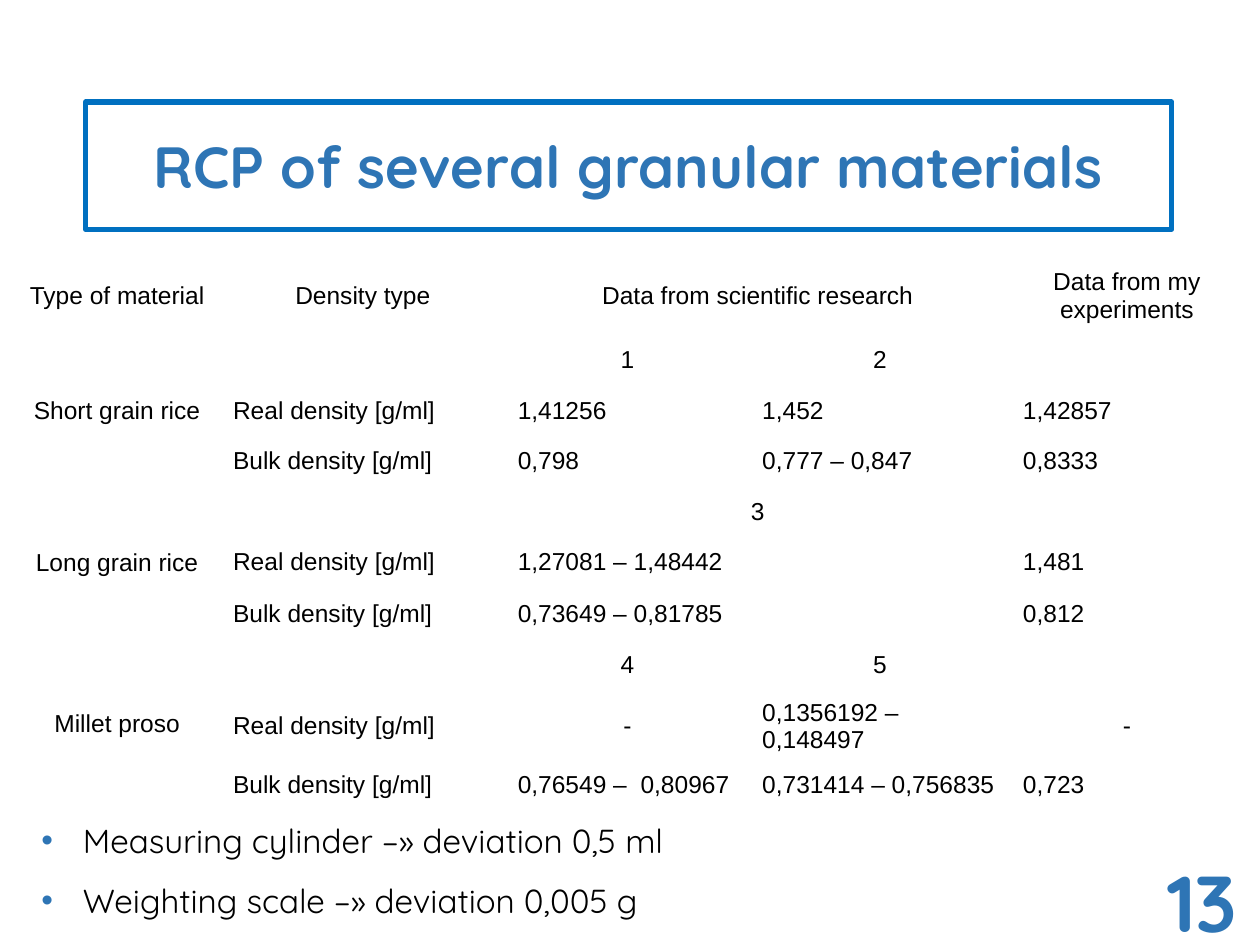
from lxml import etree
from pptx import Presentation
from pptx.dml.color import RGBColor
from pptx.enum.shapes import MSO_SHAPE
from pptx.enum.text import MSO_ANCHOR, PP_ALIGN
from pptx.oxml.ns import qn
from pptx.util import Inches, Pt

RECT = MSO_SHAPE.RECTANGLE
TOP, MIDDLE = MSO_ANCHOR.TOP, MSO_ANCHOR.MIDDLE
LEFT, CENTER, RIGHT = PP_ALIGN.LEFT, PP_ALIGN.CENTER, PP_ALIGN.RIGHT

BLUE, FRAME, BLACK = "2E75B5", "0070C0", "000000"
REAL, BULK = "Real density [g/ml]", "Bulk density [g/ml]"

COLS = [1.64, 2.26, 1.94, 2.07, 1.85]
ROWS = [0.62, 0.37, 0.4, 0.4, 0.26, 0.4, 0.42, 0.27, 0.39, 0.36]
# None marks a cell that is merged into the one to its left.
HEADS = ["Type of material", "Density type", "Data from scientific research",
         None, "Data from my experiments"]
# Each group: material, source numbers, real densities, bulk densities.
GROUPS = [
    ("Short grain rice", ["1", "2", ""],
     ["1,41256", "1,452", "1,42857"],
     ["0,798", "0,777 – 0,847", "0,8333"]),
    ("Long grain rice", ["3", None, ""],
     ["1,27081 – 1,48442", None, "1,481"],
     ["0,73649 – 0,81785", None, "0,812"]),
    ("Millet proso", ["4", "5", ""],
     ["-", "0,1356192 –  0,148497", "-"],
     ["0,76549 –  0,80967", "0,731414 – 0,756835", "0,723"]),
]
NOTES = ["Measuring cylinder –» deviation 0,5 ml",
         "Weighting scale –» deviation 0,005 g"]


def color(code):
    return RGBColor.from_string(code)


def write(para, text, size=14, font="Arial", ink=BLACK, bold=False, align=LEFT):
    para.alignment = align
    run = para.add_run()
    run.text = text
    run.font.size = Pt(size)
    run.font.name = font
    run.font.bold = bold
    run.font.color.rgb = color(ink)


def set_frame(frame, side, edge, anchor=TOP):
    frame.word_wrap = True
    frame.vertical_anchor = anchor
    frame.margin_left = frame.margin_right = Inches(side)
    frame.margin_top = frame.margin_bottom = Inches(edge)


def add_bullet(para):
    props = para._p.get_or_add_pPr()
    props.set("marL", str(Inches(0.38)))
    props.set("indent", str(Inches(-0.33)))
    tint = etree.SubElement(props, qn("a:buClr"))
    etree.SubElement(tint, qn("a:srgbClr"), val=BLUE)
    etree.SubElement(props, qn("a:buFont"), typeface="Arial")
    etree.SubElement(props, qn("a:buChar"), char="•")


def add_title(slide, box):
    shape = slide.shapes.add_shape(RECT, *map(Inches, box))
    shape.shadow.inherit = False
    shape.fill.background()
    shape.line.color.rgb = color(FRAME)
    shape.line.width = Pt(3)
    etree.SubElement(shape.line._get_or_add_ln(), qn("a:round"))
    set_frame(shape.text_frame, 0.08, 0.04, MIDDLE)
    write(shape.text_frame.paragraphs[0], "RCP of several granular materials",
          size=33.2, font="Quicksand", ink=BLUE, bold=True, align=CENTER)


def add_notes(slide, box):
    frame = slide.shapes.add_textbox(*map(Inches, box)).text_frame
    set_frame(frame, 0.1, 0.1)
    for i, note in enumerate(NOTES):
        para = frame.add_paragraph() if i else frame.paragraphs[0]
        para.line_spacing = 1.5
        add_bullet(para)
        write(para, note, size=19, font="Quicksand")


def add_number(slide, box):
    frame = slide.shapes.add_textbox(*map(Inches, box)).text_frame
    set_frame(frame, 0.08, 0.04)
    write(frame.paragraphs[0], "13", size=45.2, font="Quicksand",
          ink=BLUE, bold=True, align=RIGHT)


def table_rows():
    yield HEADS
    for name, source, real, bulk in GROUPS:
        yield [name, ""] + source
        yield ["", REAL] + real
        yield ["", BULK] + bulk


def add_grid(slide, left, top):
    table = slide.shapes.add_table(
        len(ROWS), len(COLS), Inches(left), Inches(top),
        Inches(sum(COLS)), Inches(sum(ROWS))).table
    table.first_row = table.horz_banding = False
    for col, width in zip(table.columns, COLS):
        col.width = Inches(width)
    for row, height in zip(table.rows, ROWS):
        row.height = Inches(height)

    for r, texts in enumerate(table_rows()):
        for c, text in enumerate(texts):
            cell = table.cell(r, c)
            cell.fill.background()
            cell.vertical_anchor = MIDDLE
            if text is None:
                table.cell(r, c - 1).merge(cell)
            elif text:
                # Headings, materials, source numbers and dashes are centred.
                mid = r % 3 == 1 or r == 0 or text == "-"
                write(cell.text_frame.paragraphs[0], text,
                      align=CENTER if mid else LEFT)
    for r in range(1, len(ROWS), 3):
        table.cell(r, 0).merge(table.cell(r + 2, 0))


def main():
    deck = Presentation()
    deck.slide_width, deck.slide_height = Inches(10), Inches(7.5)
    slide = deck.slides.add_slide(deck.slide_layouts[6])
    add_title(slide, (0.68, 0.81, 8.62, 1.01))
    add_notes(slide, (0.18, 6.25, 8.62, 1.09))
    add_number(slide, (8.37, 6.73, 1.53, 0.7))
    add_grid(slide, 0.11, 2.04)
    deck.save("out.pptx")


if __name__ == "__main__":
    main()
